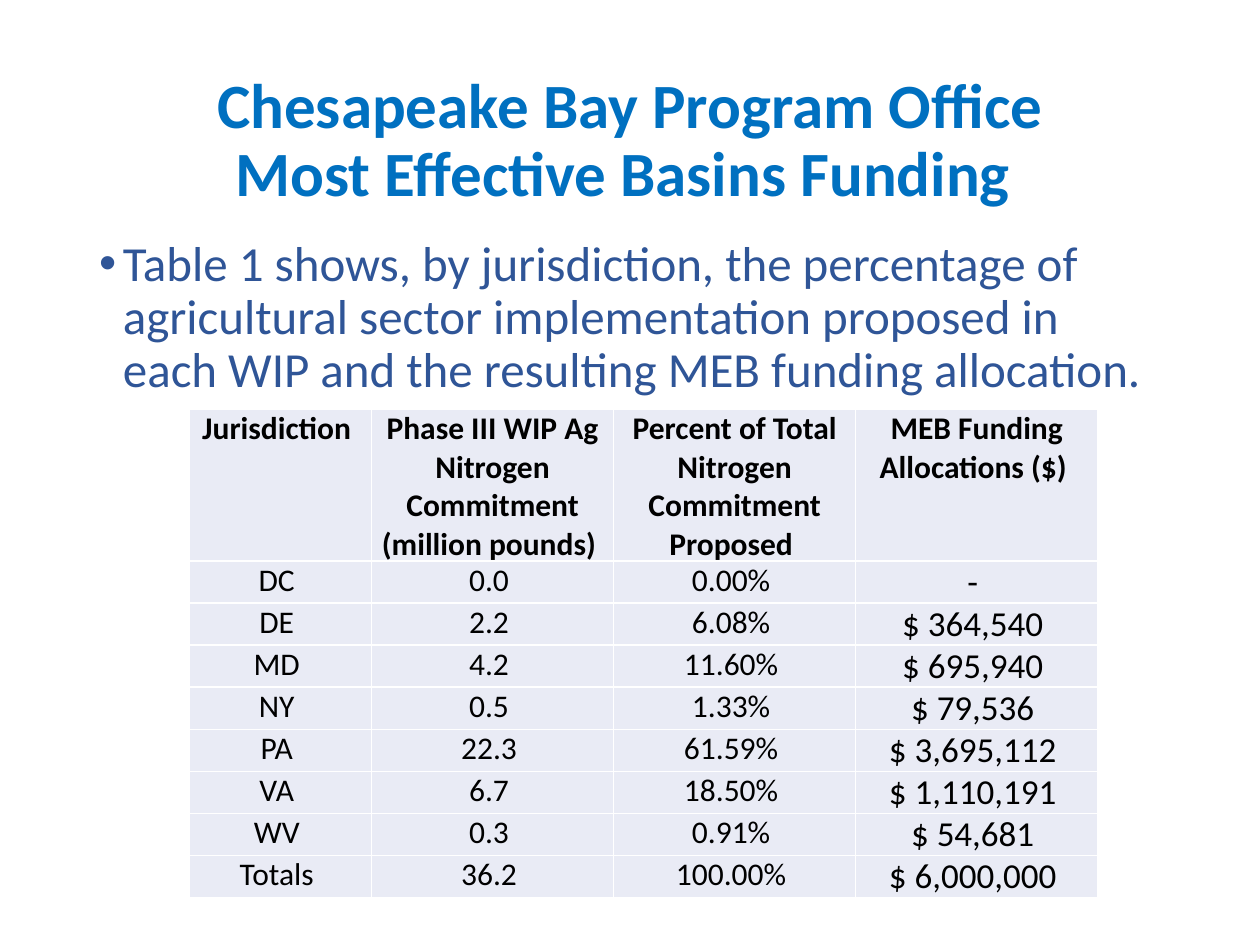
"""Build the basin funding slide with its allocation table."""
from lxml.etree import SubElement
from pptx import Presentation
from pptx.dml.color import RGBColor
from pptx.enum.text import MSO_ANCHOR, PP_ALIGN
from pptx.oxml.ns import qn
from pptx.util import Cm, Pt

BLUE = RGBColor(0x00, 0x70, 0xC0)
NAVY = RGBColor(0x2F, 0x55, 0x97)
BLACK = RGBColor(0x00, 0x00, 0x00)
PALE = RGBColor(0xE9, 0xEB, 0xF5)
WHITE = RGBColor(0xFF, 0xFF, 0xFF)

ROWS = [
    ("Jurisdiction", "Phase III WIP Ag Nitrogen Commitment (million pounds)",
     "Percent of Total Nitrogen Commitment Proposed", "MEB Funding Allocations ($)"),
    ("DC", "0.0", "0.00%", "-"),
    ("DE", "2.2", "6.08%", "$ 364,540"),
    ("MD", "4.2", "11.60%", "$ 695,940"),
    ("NY", "0.5", "1.33%", "$ 79,536"),
    ("PA", "22.3", "61.59%", "$ 3,695,112"),
    ("VA", "6.7", "18.50%", "$ 1,110,191"),
    ("WV", "0.3", "0.91%", "$ 54,681"),
    ("Totals", "36.2", "100.00%", "$ 6,000,000"),
]
WIDTHS = [3.68, 4.88, 4.88, 4.88]


def write(para, text, size, color, bold=False):
    para.text = text
    for run in para.runs:
        run.font.name = "Calibri"
        run.font.size = Pt(size)
        run.font.bold = bold
        run.font.color.rgb = color


def edge(cell):
    props = cell._tc.get_or_add_tcPr()
    for side in ("lnL", "lnR", "lnT", "lnB"):
        line = SubElement(props, qn(f"a:{side}"), w=str(Pt(1)))
        fill = SubElement(line, qn("a:solidFill"))
        SubElement(fill, qn("a:srgbClr"), val=str(WHITE))


deck = Presentation()
deck.slide_width, deck.slide_height = Cm(25.4), Cm(19.05)
slide = deck.slides.add_slide(deck.slide_layouts[6])

title = slide.shapes.add_textbox(Cm(1.75), Cm(1.02), Cm(21.9), Cm(3.68)).text_frame
title.word_wrap = True
title.vertical_anchor = MSO_ANCHOR.MIDDLE
para = title.paragraphs[0]
para.alignment = PP_ALIGN.CENTER
para.line_spacing = 0.9
write(para, "Chesapeake Bay Program Office\nMost Effective Basins Funding ", 36, BLUE, True)

body = slide.shapes.add_textbox(Cm(1.75), Cm(4.7), Cm(21.9), Cm(12.47)).text_frame
body.word_wrap = True
para = body.paragraphs[0]
para.line_spacing = 0.9
para.space_before = Pt(7.5)
write(para, "Table 1 shows, by jurisdiction, the percentage of agricultural sector "
      "implementation proposed in each WIP and the resulting MEB funding allocation.", 28, NAVY)
props = para._p.get_or_add_pPr()
props.set("marL", str(Cm(0.48)))
props.set("indent", str(-Cm(0.48)))
SubElement(props, qn("a:buFont"), typeface="Arial")
SubElement(props, qn("a:buChar"), char="•")

grid = slide.shapes.add_table(len(ROWS), len(WIDTHS), Cm(3.81), Cm(8.26),
                              Cm(sum(WIDTHS)), Cm(9.83)).table
grid.horz_banding = False
for col, width in zip(grid.columns, WIDTHS):
    col.width = Cm(width)
for r, texts in enumerate(ROWS):
    head = r == 0
    grid.rows[r].height = Cm(2.79 if head else 0.76)
    for c, text in enumerate(texts):
        cell = grid.cell(r, c)
        cell.margin_left = cell.margin_right = Cm(0.18)
        cell.margin_top = cell.margin_bottom = 0
        edge(cell)
        cell.fill.solid()
        cell.fill.fore_color.rgb = PALE
        para = cell.text_frame.paragraphs[0]
        para.alignment = PP_ALIGN.CENTER
        size = 20 if c == 3 and not head else 18
        write(para, f"{text} ", size, BLACK, head)

deck.save("out.pptx")
